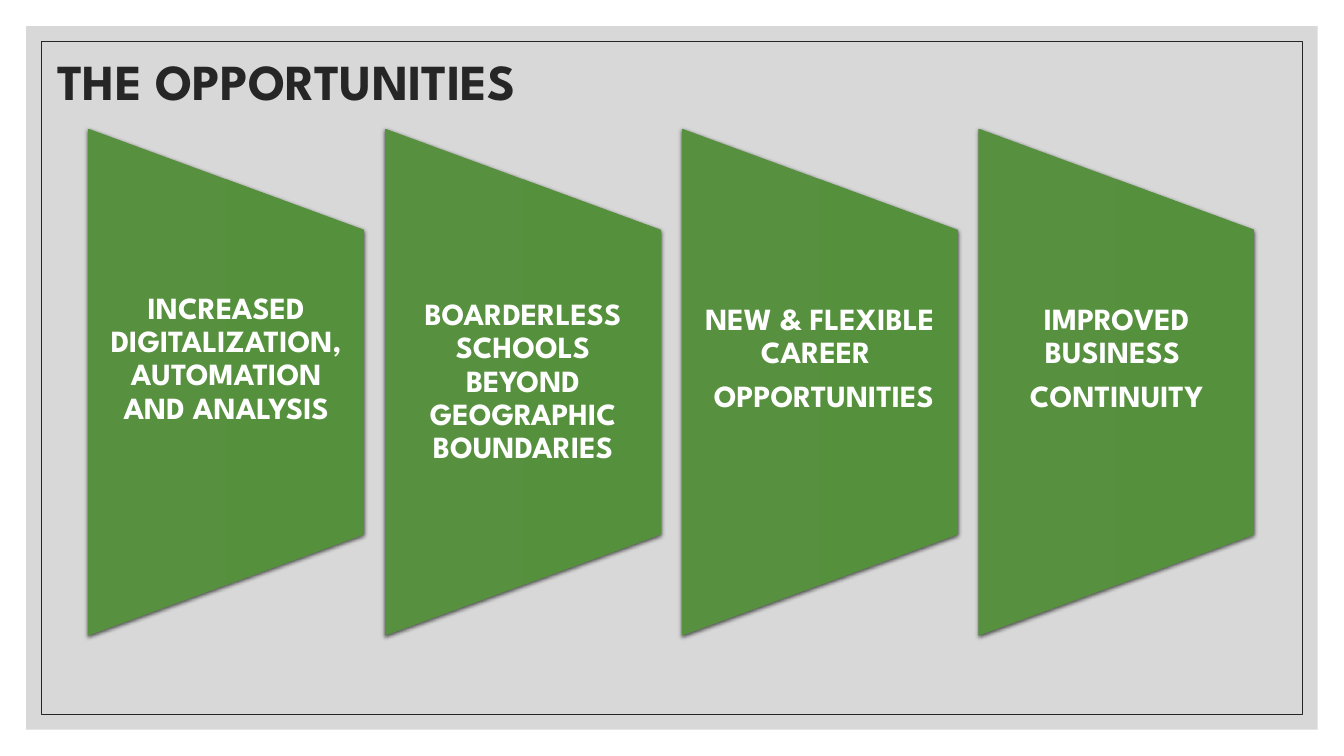
"""Build the slide on the four opportunities."""
from dataclasses import dataclass

from lxml import etree
from pptx import Presentation
from pptx import util as u
from pptx.dml.color import RGBColor
from pptx.enum import shapes, text
from pptx.oxml import parse_xml
from pptx.oxml.ns import nsdecls, qn

FONT = "League Spartan"
INK = RGBColor(0x26, 0x26, 0x26)
WHITE = RGBColor(0xFF, 0xFF, 0xFF)
GREY = RGBColor(0xBF, 0xBF, 0xBF)
GREEN_START = RGBColor(0x57, 0x90, 0x3F)
GREEN_END = RGBColor(0x55, 0x91, 0x3C)

SLIDE_WIDTH, SLIDE_HEIGHT = 33.87, 19.05
FIRST_LEFT, PITCH = 2.22, 7.48
PANEL_TOP, PANEL_WIDTH, PANEL_HEIGHT = 3.24, 6.96, 12.78
TEXT_HEIGHT = 7.67


@dataclass(frozen=True)
class Opportunity:
    """Hold the paragraphs of one panel and the space kept below them."""

    lines: tuple[str, ...]
    space_below: float = 0


OPPORTUNITIES = (
    Opportunity(("INCREASED DIGITALIZATION, AUTOMATION AND ANALYSIS",), 1.15),
    Opportunity(("BOARDERLESS SCHOOLS BEYOND GEOGRAPHIC BOUNDARIES",)),
    Opportunity(("NEW & FLEXIBLE CAREER ", " OPPORTUNITIES"), 1.15),
    Opportunity(("IMPROVED BUSINESS ", " CONTINUITY "), 1.15),
)


def write(frame, lines: tuple[str, ...], *, size: float, color: RGBColor,
          align: text.PP_ALIGN, space_after: float = 0) -> None:
    """Write bold paragraphs into a vertically centred text frame."""
    frame.word_wrap = True
    frame.auto_size = text.MSO_AUTO_SIZE.NONE
    frame.vertical_anchor = text.MSO_ANCHOR.MIDDLE
    for index, line in enumerate(lines):
        para = frame.add_paragraph() if index else frame.paragraphs[0]
        para.alignment = align
        para.line_spacing = 0.9
        para.space_before = u.Pt(0)
        para.space_after = u.Pt(space_after)
        span = para.add_run()
        span.text = line
        span.font.name = FONT
        span.font.size = u.Pt(size)
        span.font.bold = True
        span.font.color.rgb = color


def add_rectangle(page, margin: float):
    """Add a rectangle set in from every slide edge by the margin."""
    box = page.shapes.add_shape(
        shapes.MSO_SHAPE.RECTANGLE, u.Cm(margin), u.Cm(margin),
        u.Cm(SLIDE_WIDTH - 2 * margin), u.Cm(SLIDE_HEIGHT - 2 * margin))
    box.shadow.inherit = False
    return box


def add_backdrop(page) -> None:
    """Add the translucent grey panel and its thin inner frame."""
    panel = add_rectangle(page, 0.66)
    panel.fill.solid()
    panel.fill.fore_color.rgb = GREY
    panel.line.fill.background()
    color = panel._element.spPr.find(qn("a:solidFill"))[0]
    etree.SubElement(color, qn("a:alpha")).set("val", "60000")
    border = add_rectangle(page, 1.04)
    border.fill.background()
    border.line.color.rgb = INK
    border.line.width = u.Pt(0.5)


def add_title(page, wording: str) -> None:
    """Place the title in front of the backdrop and format it."""
    title = page.shapes.title
    title.left, title.top = u.Cm(1.19), u.Cm(1.27)
    title.width, title.height = u.Cm(27.94), u.Cm(1.68)
    write(title.text_frame, (wording,), size=36, color=INK,
          align=text.PP_ALIGN.LEFT)
    page.shapes._spTree.append(title._element)


def add_shadow(shape) -> None:
    """Give a shape a soft shadow just below it."""
    shape.shadow.inherit = False
    effects = shape._element.spPr.find(qn("a:effectLst"))
    effects.append(parse_xml(
        f'<a:outerShdw {nsdecls("a")} blurRad="38100" dist="12700" '
        'dir="5400000" rotWithShape="0"><a:srgbClr val="000000">'
        '<a:alpha val="63000"/></a:srgbClr></a:outerShdw>'))


def add_opportunity(page, left: float, opportunity: Opportunity) -> None:
    """Add a green panel turned on its side, with its upright text."""
    middle_x = left + PANEL_WIDTH / 2
    middle_y = PANEL_TOP + PANEL_HEIGHT / 2
    panel = page.shapes.add_shape(
        shapes.MSO_SHAPE.FLOWCHART_MANUAL_OPERATION,
        u.Cm(middle_x - PANEL_HEIGHT / 2), u.Cm(middle_y - PANEL_WIDTH / 2),
        u.Cm(PANEL_HEIGHT), u.Cm(PANEL_WIDTH))
    panel.rotation = 270
    panel.fill.gradient()
    panel.fill.gradient_angle = 270
    for stop, color in zip(panel.fill.gradient_stops, (GREEN_START, GREEN_END)):
        stop.color.rgb = color
    panel.line.fill.background()
    add_shadow(panel)

    box = page.shapes.add_textbox(
        u.Cm(left), u.Cm(middle_y - TEXT_HEIGHT / 2),
        u.Cm(PANEL_WIDTH), u.Cm(TEXT_HEIGHT))
    frame = box.text_frame
    frame.margin_left = frame.margin_right = u.Cm(0.39)
    frame.margin_top = u.Cm(0)
    frame.margin_bottom = u.Cm(opportunity.space_below)
    write(frame, opportunity.lines, size=22, color=WHITE,
          align=text.PP_ALIGN.CENTER, space_after=7.7)


def main() -> None:
    """Build and save the deck."""
    deck = Presentation()
    deck.slide_width, deck.slide_height = u.Cm(SLIDE_WIDTH), u.Cm(SLIDE_HEIGHT)
    page = deck.slides.add_slide(deck.slide_layouts.get_by_name("Title Only"))
    add_backdrop(page)
    add_title(page, "THE OPPORTUNITIES")
    for index, opportunity in enumerate(OPPORTUNITIES):
        add_opportunity(page, FIRST_LEFT + index * PITCH, opportunity)
    deck.save("out.pptx")


if __name__ == "__main__":
    main()
